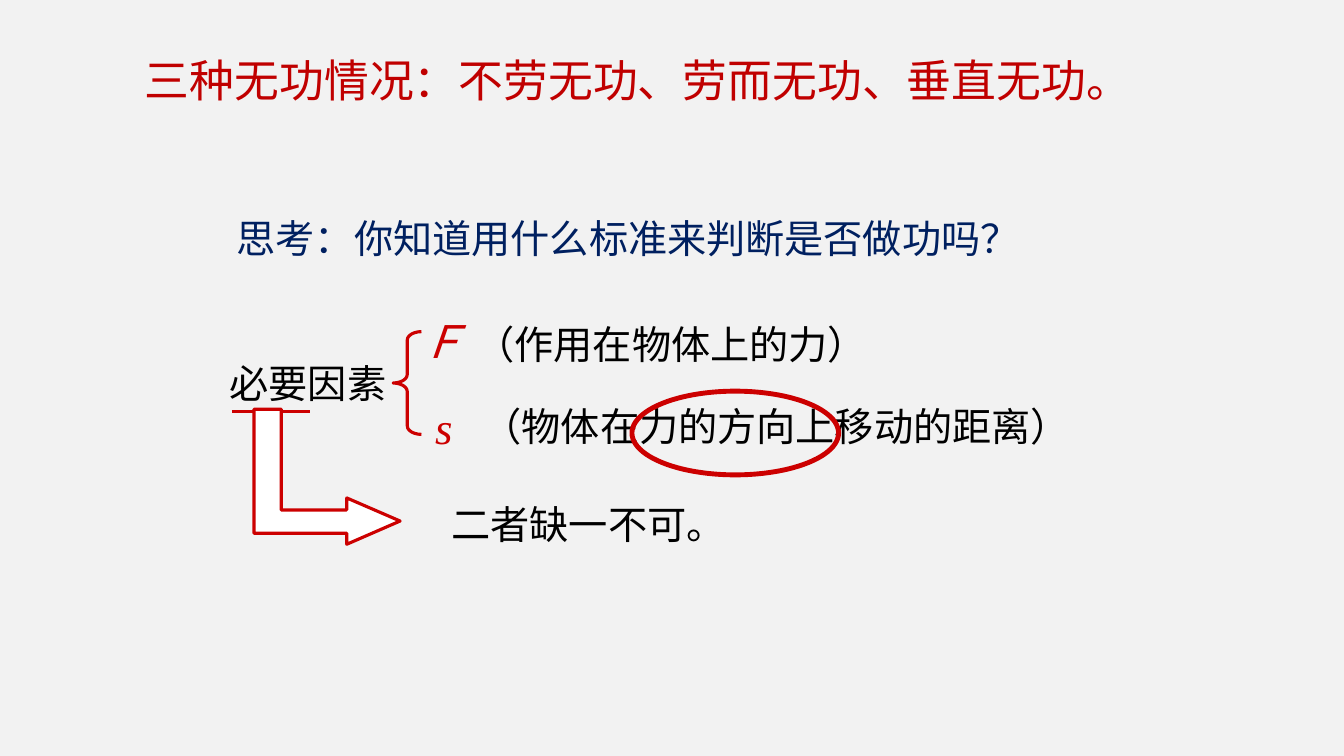
from pptx import Presentation
from pptx.dml.color import RGBColor
from pptx.enum.shapes import MSO_CONNECTOR, MSO_SHAPE
from pptx.enum.text import MSO_ANCHOR, MSO_AUTO_SIZE
from pptx.oxml.ns import qn
from pptx.util import Pt

OVAL, BRACE = MSO_SHAPE.OVAL, MSO_SHAPE.LEFT_BRACE
STRAIGHT = MSO_CONNECTOR.STRAIGHT
TOP, GROW = MSO_ANCHOR.TOP, MSO_AUTO_SIZE.SHAPE_TO_FIT_TEXT

THEME = {
    "latin": "Times New Roman", "asian": "Noto Sans CJK SC",
    "body": 28, "large": 32, "line": 2.25, "thick": 3.5,
    "background": "F2F2F2", "black": "000000", "white": "FFFFFF",
    "red": "CC0000", "title": "C00000", "question": "002060",
}

# Content: text, (left, top, width, height) in points, format
TEXTS = [
    ("三种无功情况：不劳无功、劳而无功、垂直无功。", (96.5, 33.8, 738.7, 46.1),
     {"size": "large", "color": "title", "font": "asian"}),
    ("思考：你知道用什么标准来判断是否做功吗？", (162, 149.8, 562.3, 41),
     {"color": "question"}),
    ("必要因素", (157, 253.4, 141.8, 41), {}),
    ("Ｆ", (293, 220.3, 73.4, 45.4),
     {"size": "large", "color": "red", "italic": True}),
    ("（作用在物体上的力）", (332.6, 225.4, 303.1, 41), {}),
    ("s", (303.8, 282.2, 39.6, 45.4),
     {"size": "large", "color": "red", "italic": True}),
    ("（物体在力的方向上移动的距离）", (343.4, 286.6, 436.3, 35.3),
     {"insets": (1.4, 0.7)}),
    ("二者缺一不可。", (315.4, 353.5, 326.2, 41), {}),
]
FACTOR_BRACE = (280.8, 236.9, 20.2, 73.4)
DIRECTION_RING = (451.4, 279.4, 147.6, 59.8)
UNDERLINE = (165.6, 293.8, 221.8, 293.8)
BENT_ARROW = [(285.8, 372.2), (247.7, 355.7), (247.7, 364.3), (200.9, 364.3),
              (200.9, 292.3), (181.4, 292.3), (181.4, 380.9), (247.7, 380.9),
              (247.7, 388.8)]


def rgb(name):
    return RGBColor.from_string(THEME[name])


def add_text(page, text, place, size="body", color="black", font="latin",
             italic=False, insets=(7.2, 3.6)):
    box = page.shapes.add_textbox(*map(Pt, place))
    frame = box.text_frame
    frame.word_wrap, frame.auto_size = True, GROW
    frame.vertical_anchor = TOP
    frame.margin_left = frame.margin_right = Pt(insets[0])
    frame.margin_top = frame.margin_bottom = Pt(insets[1])
    span = frame.paragraphs[0].add_run()
    span.text = text
    span.font.size, span.font.italic = Pt(THEME[size]), italic
    span.font.name = THEME[font]
    span.font.color.rgb = rgb(color)
    # East Asian typeface
    asian = span.font._element.makeelement(
        qn("a:ea"), {"typeface": THEME["asian"]})
    span.font._element.append(asian)


def style_outline(shape, width="line", fill=None):
    shape.shadow.inherit = False
    if fill:
        shape.fill.solid()
        shape.fill.fore_color.rgb = rgb(fill)
    else:
        shape.fill.background()
    shape.line.color.rgb = rgb("red")
    shape.line.width = Pt(THEME[width])


def main():
    deck = Presentation()
    deck.slide_width, deck.slide_height = Pt(960), Pt(540)
    page = deck.slides.add_slide(deck.slide_layouts[6])
    page.background.fill.solid()
    page.background.fill.fore_color.rgb = rgb("background")

    # Wording
    for text, place, style in TEXTS:
        add_text(page, text, place, **style)

    # Ring round the key phrase
    ring = page.shapes.add_shape(OVAL, *map(Pt, DIRECTION_RING))
    style_outline(ring, width="thick")

    # Brace joining the two factors
    brace = page.shapes.add_shape(BRACE, *map(Pt, FACTOR_BRACE))
    brace.adjustments[0], brace.adjustments[1] = 0.3, 0.5
    style_outline(brace)

    # Underline
    underline = page.shapes.add_connector(STRAIGHT, *map(Pt, UNDERLINE))
    underline.line.color.rgb = rgb("red")
    underline.line.width = Pt(THEME["line"])
    properties = underline._element.spPr
    properties.append(properties.makeelement(qn("a:effectLst"), {}))

    # Bent arrow to the conclusion
    start, *corners = [(Pt(x), Pt(y)) for x, y in BENT_ARROW]
    builder = page.shapes.build_freeform(*start)
    builder.add_line_segments(corners, close=True)
    style_outline(builder.convert_to_shape(), fill="white")

    deck.save("out.pptx")


if __name__ == "__main__":
    main()
